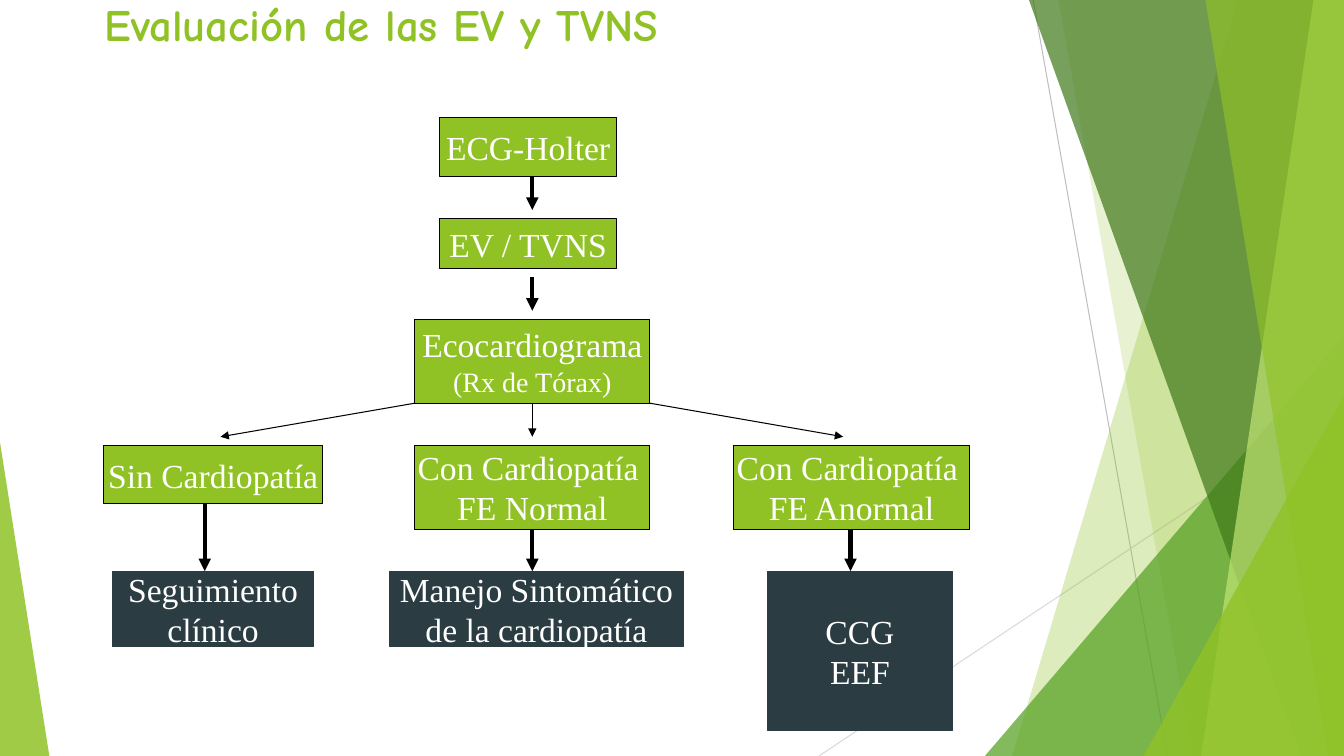
from dataclasses import dataclass
from typing import Any

from lxml import etree
from pptx import Presentation
from pptx.dml.color import RGBColor
from pptx.enum.shapes import MSO_CONNECTOR, MSO_SHAPE
from pptx.enum.text import MSO_ANCHOR, MSO_AUTO_SIZE, PP_ALIGN
from pptx.oxml.ns import qn
from pptx.util import Pt

STRAIGHT = MSO_CONNECTOR.STRAIGHT
RECTANGLE, TRIANGLE = MSO_SHAPE.RECTANGLE, MSO_SHAPE.ISOSCELES_TRIANGLE
TOP, MIDDLE = MSO_ANCHOR.TOP, MSO_ANCHOR.MIDDLE
LEFT, CENTER = PP_ALIGN.LEFT, PP_ALIGN.CENTER
NO_AUTOFIT = MSO_AUTO_SIZE.NONE

EMU_PER_PX = 9525
WIDTH, HEIGHT = 1280, 720
GREEN, SLATE, BLACK, WHITE = "90C226", "2C3C43", "000000", "FFFFFF"
THIN, THICK = 0.75, 3


@dataclass
class Band:
    """Panel running from the top edge to the bottom edge, up to the right side."""
    top_x: int
    bottom_x: int
    color: str
    alpha: int


@dataclass
class Wedge:
    """Right triangle standing on the bottom edge."""
    left: int
    width: int
    height: int
    peak: int
    color: str
    alpha: int


@dataclass
class Line:
    x1: int
    y1: int
    x2: int
    y2: int
    weight: float = THICK
    color: str = BLACK
    arrow: bool = True


@dataclass
class Step:
    left: int
    top: int
    width: int
    height: int
    lines: list[str]
    fill: str = GREEN
    border: str = BLACK
    second_size: int = 24


RAYS = [
    Line(984, 0, 1112, 720, THIN, "BFBFBF", False),
    Line(1280, 387, 780, 720, THIN, "D9D9D9", False),
]
FACETS = [
    Band(1179, 964, GREEN, 30),
    Band(1008, 1136, GREEN, 20),
    Wedge(938, 342, 400, 1, "54A021", 72),
    Band(980, 1239, "3F7819", 70),
    Band(1251, 1144, "C0E474", 70),
    Band(1148, 1265, GREEN, 65),
    Wedge(1089, 191, 343, 1, GREEN, 80),
    Wedge(0, 47, 299, 0, GREEN, 85),
]
STEPS = [
    Step(419, 112, 168, 56, ["ECG-Holter"]),
    Step(419, 208, 168, 48, ["EV / TVNS"]),
    Step(395, 304, 224, 80, ["Ecocardiograma", "(Rx de Tórax)"], second_size=20),
    Step(99, 424, 208, 56, ["Sin Cardiopatía"]),
    Step(395, 424, 224, 80, ["Con Cardiopatía ", "FE Normal"]),
    Step(699, 424, 224, 80, ["Con Cardiopatía ", "FE Anormal"]),
    Step(107, 544, 192, 72, ["Seguimiento", "clínico"], SLATE, SLATE),
    Step(371, 544, 280, 72, ["Manejo Sintomático", "de la cardiopatía"], SLATE, SLATE),
    Step(731, 544, 176, 152, ["CCG", "EEF"], SLATE, SLATE),
]
ARROWS = [
    Line(507, 168, 507, 200),
    Line(507, 264, 507, 296),
    Line(395, 384, 210, 416, THIN),
    Line(507, 384, 507, 416, THIN),
    Line(619, 384, 803, 416, THIN),
    Line(195, 480, 195, 544),
    Line(507, 504, 507, 544),
    Line(810, 504, 810, 544),
]


def px(*lengths: int) -> list[int]:
    return [length * EMU_PER_PX for length in lengths]


def rgb(color: str) -> RGBColor:
    return RGBColor.from_string(color)


def assign(target: Any, values: dict[str, Any]) -> None:
    for name, value in values.items():
        setattr(target, name, value)


def paint(shape: Any, color: str, alpha: int = 100) -> None:
    shape.shadow.inherit = False
    shape.fill.solid()
    shape.fill.fore_color.rgb = rgb(color)
    if alpha < 100:
        tone = shape.fill._xPr.find(qn("a:solidFill"))[0]
        etree.SubElement(tone, qn("a:alpha"), val=str(alpha * 1000))


def write(paragraph: Any, text: str, align: Any, font: dict[str, Any], color: str) -> None:
    paragraph.alignment = align
    run = paragraph.add_run()
    run.text = text
    assign(run.font, font)
    run.font.color.rgb = rgb(color)


def draw_line(slide: Any, line: Line) -> None:
    connector = slide.shapes.add_connector(STRAIGHT, *px(line.x1, line.y1, line.x2, line.y2))
    connector.line.width = Pt(line.weight)
    connector.line.color.rgb = rgb(line.color)
    if line.arrow:
        etree.SubElement(connector.line._get_or_add_ln(), qn("a:tailEnd"), type="triangle")
    etree.SubElement(connector._element.spPr, qn("a:effectLst"))


def draw_facet(slide: Any, facet: Band | Wedge) -> None:
    if isinstance(facet, Band):
        outline = slide.shapes.build_freeform(facet.top_x, 0, EMU_PER_PX)
        outline.add_line_segments([(WIDTH, 0), (WIDTH, HEIGHT), (facet.bottom_x, HEIGHT)])
        panel = outline.convert_to_shape()
    else:
        frame = px(facet.left, HEIGHT - facet.height, facet.width, facet.height)
        panel = slide.shapes.add_shape(TRIANGLE, *frame)
        panel.adjustments[0] = facet.peak
    paint(panel, facet.color, facet.alpha)
    panel.line.fill.background()


def draw_step(slide: Any, step: Step) -> None:
    box = slide.shapes.add_shape(RECTANGLE, *px(step.left, step.top, step.width, step.height))
    paint(box, step.fill)
    box.line.color.rgb = rgb(step.border)
    box.line.width = Pt(THIN)
    frame = box.text_frame
    assign(frame, {"word_wrap": False, "vertical_anchor": MIDDLE})
    for index, text in enumerate(step.lines):
        paragraph = frame.add_paragraph() if index else frame.paragraphs[0]
        size = step.second_size if index else 24
        write(paragraph, text, CENTER, {"name": "Times New Roman", "size": Pt(size)}, WHITE)


def draw_title(slide: Any, text: str) -> None:
    title = slide.shapes.title
    left, top, width, height = px(90, -8, 816, 120)
    assign(title, {"left": left, "top": top, "width": width, "height": height})
    frame = title.text_frame
    assign(frame, {"word_wrap": True, "vertical_anchor": TOP, "auto_size": NO_AUTOFIT})
    font = {"name": "Comic Neue", "size": Pt(32), "bold": True}
    write(frame.paragraphs[0], text, LEFT, font, GREEN)


def main() -> None:
    deck = Presentation()
    deck.slide_width, deck.slide_height = px(WIDTH, HEIGHT)
    slide = deck.slides.add_slide(deck.slide_layouts[5])

    # Background rays and facets
    for ray in RAYS:
        draw_line(slide, ray)
    for facet in FACETS:
        draw_facet(slide, facet)

    # Title and decision flow
    draw_title(slide, "Evaluación de las EV y TVNS")
    for step in STEPS:
        draw_step(slide, step)
    for arrow in ARROWS:
        draw_line(slide, arrow)

    deck.save("out.pptx")


if __name__ == "__main__":
    main()
